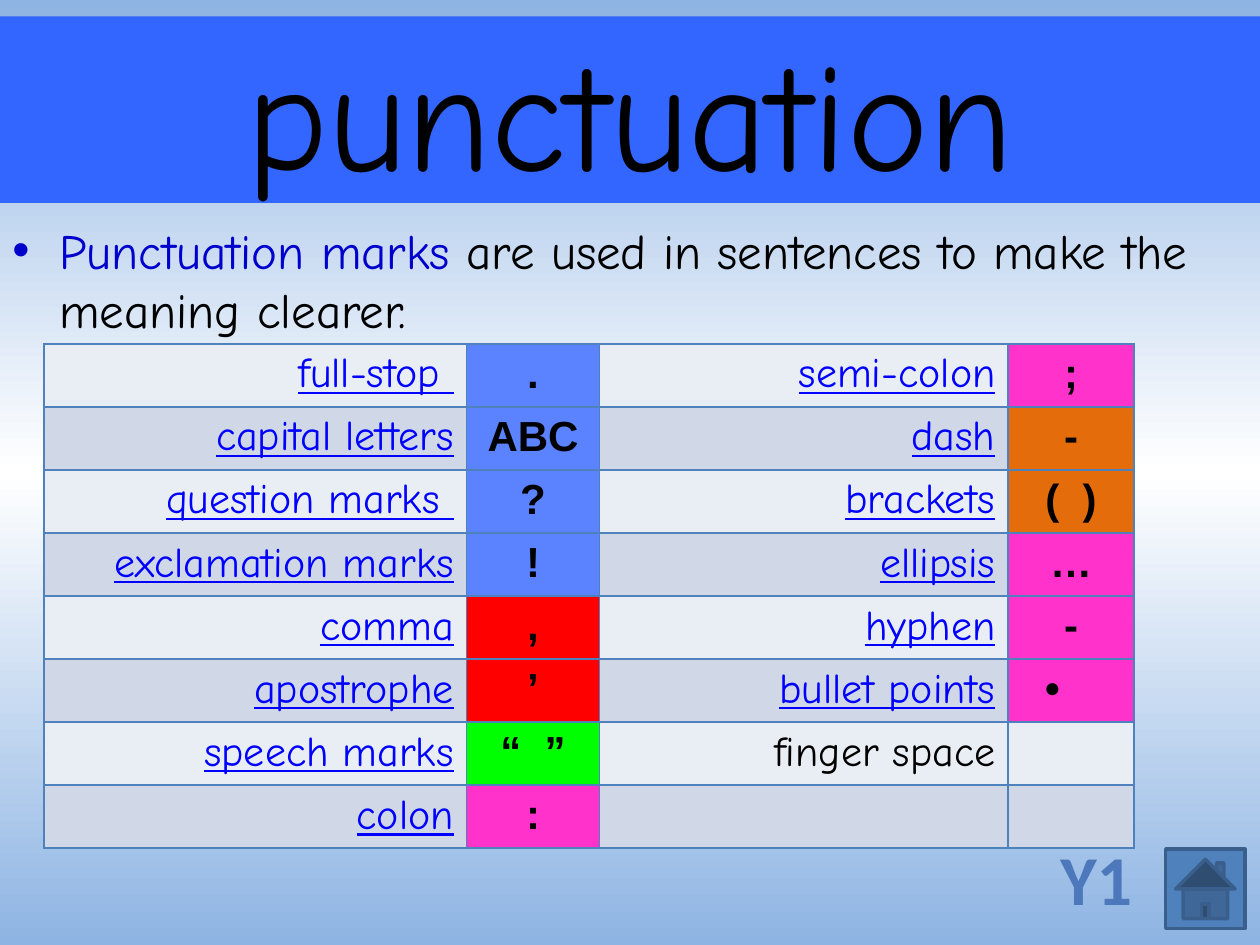
from copy import deepcopy
from dataclasses import dataclass

from lxml import etree
from pptx import Presentation
from pptx import util as u
from pptx.dml.color import RGBColor
from pptx.enum import shapes, text
from pptx.oxml.ns import qn


@dataclass(frozen=True)
class Theme:
    hand: str = "Comic Neue"
    plain: str = "Arial"
    label: str = "Calibri"
    title_size: int = 88
    body_size: int = 28
    cell_size: int = 24
    year_size: int = 40
    black: str = "000000"
    keyword: str = "0000CC"
    link: str = "0000FF"
    banner: str = "3366FF"
    sky: tuple = ((0, "8EB4E3"), (0.5, "FFFFFF"), (1, "8EB4E3"))
    bands: tuple = ("E9EDF4", "D0D8E8")
    border: str = "4F81BD"
    button_line: str = "3A5F8C"
    year: str = "4D79BC"
    blue: str = "5B82FF"
    red: str = "FF0000"
    green: str = "00FF00"
    pink: str = "FF33CC"
    orange: str = "E46C0A"


def rgb(code):
    return RGBColor.from_string(code)


class SlideBuilder:
    def __init__(self, slide, theme):
        self.slide, self.theme = slide, theme

    def style(self, run, size, color, font=None, bold=False, underline=False):
        run.font.name = font or self.theme.hand
        run.font.size = u.Pt(size)
        run.font.color.rgb = rgb(color)
        run.font.bold = bold
        run.font.underline = underline

    def background(self):
        fill = self.slide.background.fill
        fill.gradient()
        fill.gradient_angle = 90
        stops = self.slide.element.find(".//" + qn("a:gsLst"))
        stops.insert(1, deepcopy(stops[0]))
        for stop, (position, color) in zip(fill.gradient_stops, self.theme.sky):
            stop.position = position
            stop.color.rgb = rgb(color)

    def shape(self, kind, box, fill, line=None):
        shape = self.slide.shapes.add_shape(kind, *map(u.Cm, box))
        shape.shadow.inherit = False
        shape.fill.solid()
        shape.fill.fore_color.rgb = rgb(fill)
        if line:
            shape.line.color.rgb = rgb(line)
            shape.line.width = u.Pt(2)
        else:
            shape.line.fill.background()
        return shape

    def banner(self, box, words):
        frame = self.shape(shapes.MSO_SHAPE.RECTANGLE, box, self.theme.banner).text_frame
        frame.text = words
        frame.vertical_anchor = text.MSO_ANCHOR.MIDDLE
        frame.paragraphs[0].alignment = text.PP_ALIGN.CENTER
        self.style(frame.paragraphs[0].runs[0], self.theme.title_size, self.theme.black)

    def bullet(self, box, pieces):
        frame = self.slide.shapes.add_textbox(*map(u.Cm, box)).text_frame
        frame.word_wrap = True
        sentence = frame.paragraphs[0]
        sentence.space_before = u.Pt(5.6)
        for words, color in pieces:
            run = sentence.add_run()
            run.text = words
            self.style(run, self.theme.body_size, color)
        props = sentence._p.get_or_add_pPr()
        props.set("marL", str(u.Cm(0.95)))
        props.set("indent", str(u.Cm(-0.95)))
        etree.SubElement(props, qn("a:buFont"), typeface=self.theme.plain)
        etree.SubElement(props, qn("a:buChar"), char="•")

    def year(self, box, words):
        frame = self.slide.shapes.add_textbox(*map(u.Cm, box)).text_frame
        frame.word_wrap = False
        frame.text = words
        frame.paragraphs[0].alignment = text.PP_ALIGN.CENTER
        self.style(frame.paragraphs[0].runs[0], self.theme.year_size,
                   self.theme.year, self.theme.label, bold=True)

    def cell(self, cell, words, fill, align, **style):
        props = cell._tc.get_or_add_tcPr()
        for side in ("a:lnL", "a:lnR", "a:lnT", "a:lnB"):
            line = etree.SubElement(props, qn(side), w=str(u.Pt(1)))
            paint = etree.SubElement(line, qn("a:solidFill"))
            etree.SubElement(paint, qn("a:srgbClr"), val=self.theme.border)
        cell.fill.solid()
        cell.fill.fore_color.rgb = rgb(fill)
        cell.text = words
        paragraph = cell.text_frame.paragraphs[0]
        paragraph.alignment = align
        paragraph.font.size = u.Pt(self.theme.cell_size)
        for run in paragraph.runs:
            self.style(run, self.theme.cell_size, **style)

    def marks_table(self, left, top, widths, row_height, halves, unlinked):
        theme, rows = self.theme, len(halves[0])
        table = self.slide.shapes.add_table(
            rows, len(widths), u.Cm(left), u.Cm(top),
            u.Cm(sum(widths)), u.Cm(row_height * rows)).table
        for column, width in zip(table.columns, widths):
            column.width = u.Cm(width)
        for row in table.rows:
            row.height = u.Cm(row_height)
        for half, entries in enumerate(halves):
            for r, (name, mark, color) in enumerate(entries):
                band = theme.bands[r % 2]
                linked = name not in unlinked
                self.cell(table.cell(r, 2 * half), name, band, text.PP_ALIGN.RIGHT,
                          color=theme.link if linked else theme.black, underline=linked)
                mark_cell = table.cell(r, 2 * half + 1)
                listed = mark == "•"
                self.cell(mark_cell, mark, color or band,
                          text.PP_ALIGN.LEFT if listed else text.PP_ALIGN.CENTER,
                          color=theme.black, font=theme.plain, bold=True)
                if listed:
                    mark_cell.margin_left = u.Cm(0.75)


def main():
    theme = Theme()
    deck = Presentation()
    deck.slide_width, deck.slide_height = u.Cm(25.4), u.Cm(19.05)
    page = SlideBuilder(deck.slides.add_slide(deck.slide_layouts[6]), theme)

    # Background and home button
    page.background()
    page.shape(shapes.MSO_SHAPE.ACTION_BUTTON_HOME, (23.5, 17.12, 1.6, 1.6),
               theme.border, theme.button_line)

    # Heading and definition
    page.banner((0, 0.33, 25.4, 3.76), "punctuation")
    page.bullet((0, 4.32, 25.4, 14.73), [
        ("Punctuation marks", theme.keyword),
        (" are used in sentences to make the meaning clearer.", theme.black)])

    # Names of the marks beside the marks
    first_half = [
        ("full-stop ", ".", theme.blue),
        ("capital letters", "ABC", theme.blue),
        ("question marks ", "?", theme.blue),
        ("exclamation marks", "!", theme.blue),
        ("comma", ",", theme.red),
        ("apostrophe", "’", theme.red),
        ("speech marks", "“  ”", theme.green),
        ("colon", ":", theme.pink)]
    second_half = [
        ("semi-colon", ";", theme.pink),
        ("dash", "-", theme.orange),
        ("brackets", "(  )", theme.orange),
        ("ellipsis", "…", theme.pink),
        ("hyphen", "-", theme.pink),
        ("bullet points", "•", theme.pink),
        ("finger space", "", None),
        ("", "", None)]
    page.marks_table(0.89, 6.93, (8.51, 2.69, 8.23, 2.54), 1.23,
                     (first_half, second_half), unlinked=("finger space", ""))

    # Year group
    page.year((21.11, 16.71, 1.98, 1.96), "Y1")

    deck.save("out.pptx")


if __name__ == "__main__":
    main()
